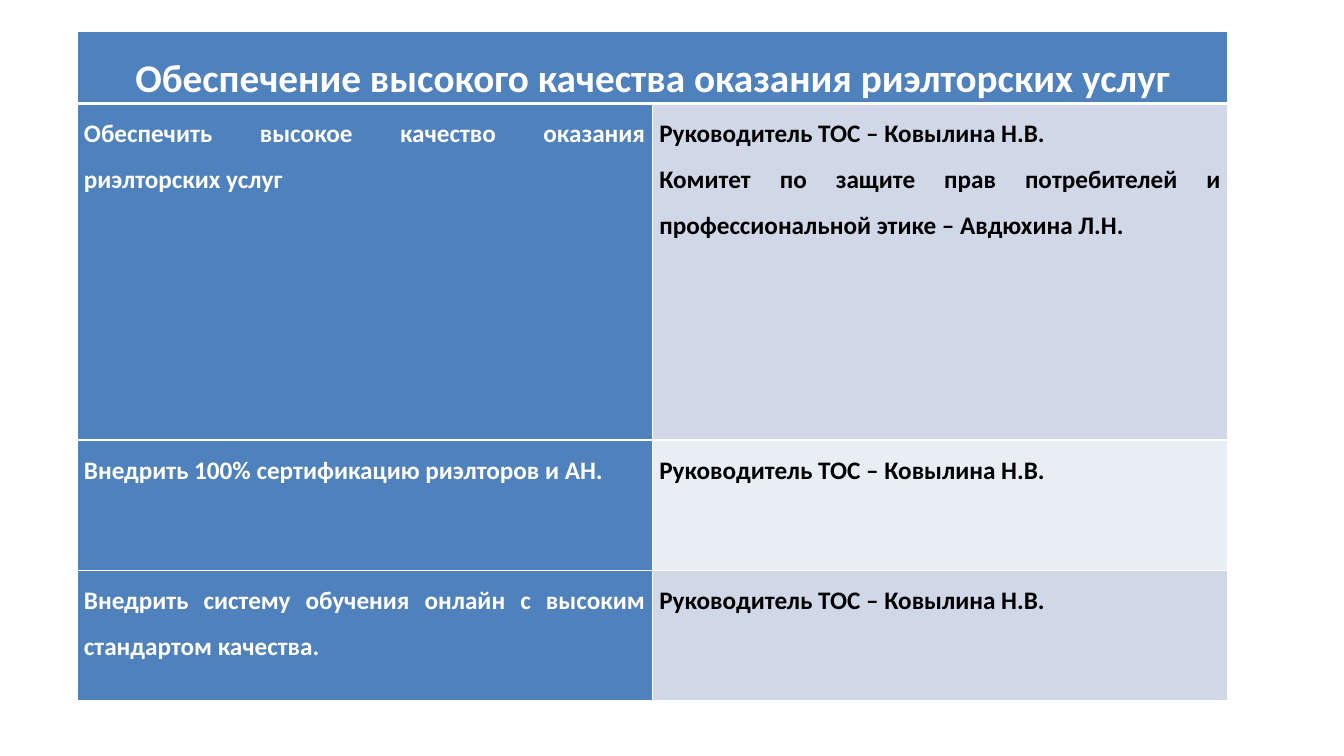
from pptx import Presentation
from pptx.dml.color import RGBColor
from pptx.enum.text import PP_ALIGN
from pptx.oxml import parse_xml
from pptx.oxml.ns import nsdecls
from pptx.util import Pt

BLUE, PALE, LIGHT = "4F81BD", "D0D8E8", "E9EDF4"
WHITE, BLACK = "FFFFFF", "000000"
HEADING = "Обеспечение высокого качества оказания риэлторских услуг"
LEADER = "Руководитель ТОС – Ковылина Н.В."
COMMITTEE = "Комитет по защите прав потребителей и профессиональной этике – Авдюхина Л.Н."
TASKS = [
    ("Обеспечить высокое качество оказания риэлторских услуг", [LEADER, COMMITTEE]),
    ("Внедрить 100% сертификацию риэлторов и АН.", [LEADER]),
    ("Внедрить систему обучения онлайн с высоким стандартом качества.", [LEADER]),
]
ROW_HEIGHTS = [46, 240.5, 93, 93]
COLUMN_WIDTH = 411


def rgb(value):
    return RGBColor.from_string(value)


def set_borders(cell, top=1, bottom=1):
    properties = cell._tc.get_or_add_tcPr()
    for side, width in (("L", 1), ("R", 1), ("T", top), ("B", bottom)):
        properties.append(parse_xml(
            f'<a:ln{side} {nsdecls("a")} w="{Pt(width)}"><a:solidFill>'
            f'<a:srgbClr val="{WHITE}"/></a:solidFill></a:ln{side}>'))


def fill_cell(cell, fill, color, lines, size=18, align=PP_ALIGN.JUSTIFY):
    cell.fill.solid()
    cell.fill.fore_color.rgb = rgb(fill)
    cell.margin_left = cell.margin_right = Pt(5)
    cell.margin_top = cell.margin_bottom = Pt(0)
    cell.text = "\n".join(lines)
    for para in cell.text_frame.paragraphs:
        para.alignment = align
        para.line_spacing = 1.5
        para.font.name = "Calibri"
        para.font.size = Pt(size)
        para.font.bold = True
        para.font.color.rgb = rgb(color)


def add_task_table(page):
    frame = page.shapes.add_table(
        len(ROW_HEIGHTS), 2, Pt(55), Pt(22.5), Pt(2 * COLUMN_WIDTH), Pt(sum(ROW_HEIGHTS)))
    table = frame.table
    for column in table.columns:
        column.width = Pt(COLUMN_WIDTH)
    for index, height in enumerate(ROW_HEIGHTS):
        table.rows[index].height = Pt(height)
        for cell in table.rows[index].cells:
            set_borders(cell, top=3 if index == 1 else 1, bottom=3 if index == 0 else 1)

    heading = table.cell(0, 0)
    heading.merge(table.cell(0, 1))
    fill_cell(heading, BLUE, WHITE, [HEADING], size=28, align=PP_ALIGN.CENTER)
    for index, (task, people) in enumerate(TASKS, start=1):
        fill_cell(table.cell(index, 0), BLUE, WHITE, [task])
        fill_cell(table.cell(index, 1), PALE if index % 2 else LIGHT, BLACK, people)


def main():
    deck = Presentation()
    deck.slide_width, deck.slide_height = Pt(960), Pt(540)
    page = deck.slides.add_slide(deck.slide_layouts[6])
    add_task_table(page)
    deck.save("out.pptx")


if __name__ == "__main__":
    main()
